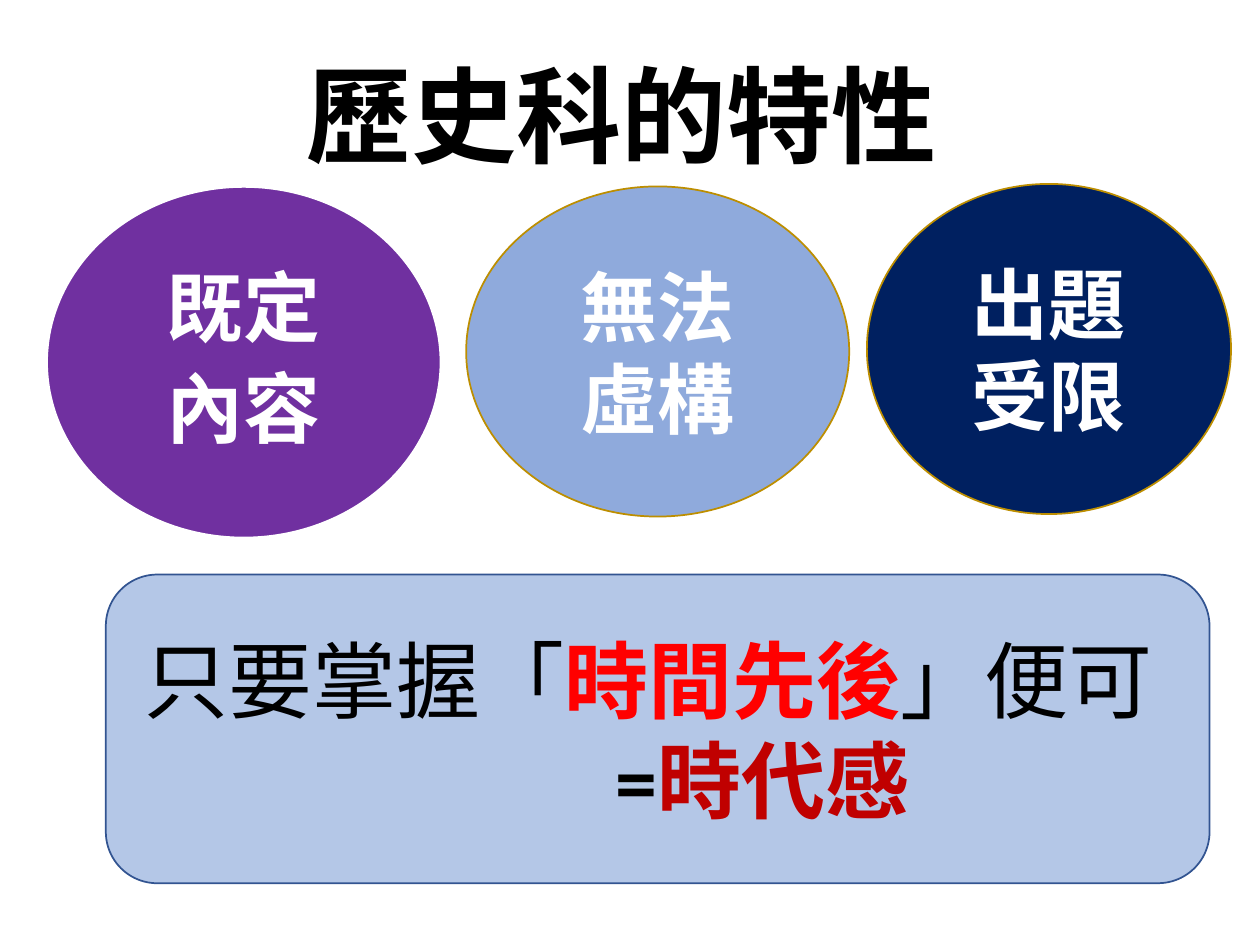
from lxml.etree import SubElement
from pptx import Presentation
from pptx.dml.color import RGBColor
from pptx.enum.shapes import MSO_SHAPE
from pptx.enum.text import MSO_ANCHOR, MSO_AUTO_SIZE, PP_ALIGN
from pptx.oxml.ns import qn
from pptx.util import Inches, Pt

COLS, ROWS = 100, 75
CJK, LATIN = "Noto Sans CJK SC", "Calibri"


def color(value):
    return RGBColor.from_string(value)


def apply(obj, values):
    for name, value in values.items():
        setattr(obj, name, value)


class Deck:
    """Holds the style and the current slide and draws its elements."""

    def __init__(self):
        self.prs = Presentation()
        apply(self.prs, {"slide_width": Inches(10), "slide_height": Inches(7.5)})
        self.s = self.prs.slides.add_slide(self.prs.slide_layouts[1])

    def box(self, x, y, w, h):
        dx, dy = self.prs.slide_width / COLS, self.prs.slide_height / ROWS
        return {"left": int(x * dx), "top": int(y * dy),
                "width": int(w * dx), "height": int(h * dy)}

    def fill_text(self, sp, lines, size, font, para):
        tf = sp.text_frame
        apply(tf, {"word_wrap": True, "auto_size": MSO_AUTO_SIZE.NONE,
                   "vertical_anchor": MSO_ANCHOR.MIDDLE})
        for i, runs in enumerate(lines):
            p = tf.add_paragraph() if i else tf.paragraphs[0]
            apply(p, para)
            for text, ink, bold in runs:
                r = p.add_run()
                r.text = text
                apply(r.font, {"size": Pt(size), "name": font, "bold": bold})
                r.font.color.rgb = color(ink)
                SubElement(r._r.get_or_add_rPr(), qn("a:ea"), typeface=CJK)
        return sp

    def paint(self, sp, fill, line, width):
        sp.fill.solid()
        sp.fill.fore_color.rgb = color(fill)
        sp.line.color.rgb = color(line)
        sp.line.width = Pt(width)

    def title(self, at, text):
        sp = self.s.shapes.title
        apply(sp, self.box(*at))
        self.fill_text(sp, [[(text, "000000", True)]], 60, CJK,
                       {"alignment": PP_ALIGN.LEFT, "line_spacing": 0.9})

    def body_oval(self, at, lines, fill, line):
        sp = self.s.placeholders[1]
        apply(sp, self.box(*at))
        geom = SubElement(sp._element.spPr, qn("a:prstGeom"), prst="ellipse")
        SubElement(geom, qn("a:avLst"))
        self.paint(sp, fill, line, 1.5)
        self.fill_text(sp, [[(t, "FFFFFF", True)] for t in lines], 44, CJK,
                       {"alignment": PP_ALIGN.CENTER, "line_spacing": 0.9,
                        "space_before": Pt(10)})
        for p in sp.text_frame.paragraphs:
            pPr = p._p.get_or_add_pPr()
            pPr.set("marL", "0")
            pPr.set("indent", "0")
            SubElement(pPr, qn("a:buNone"))

    def shape(self, kind, at, lines, size, fill, line):
        sp = self.s.shapes.add_shape(kind, *self.box(*at).values())
        sp.shadow.inherit = False
        self.paint(sp, fill, line, 1)
        return self.fill_text(sp, lines, size, LATIN, {"alignment": PP_ALIGN.CENTER})

    def oval(self, at, lines, fill):
        self.shape(MSO_SHAPE.OVAL, at, [[(t, "FFFFFF", True)] for t in lines],
                   44, fill, "BD8E00")

    def panel(self, at, lines, indent):
        sp = self.shape(MSO_SHAPE.ROUNDED_RECTANGLE, at, lines, 48, "B4C7E7", "325491")
        sp.text_frame.paragraphs[-1]._p.get_or_add_pPr().set("marL", str(Inches(indent)))


def main():
    deck = Deck()
    deck.title((23.3, 2.4, 86.2, 14.5), "歷史科的特性")
    deck.body_oval((3.7, 14.8, 31.3, 27.9), ["既定", "內容"], "7030A0", "FFFFFF")
    deck.oval((37, 14.8, 30.4, 26.2), ["無法", "虛構"], "8FAADC")
    deck.oval((68.8, 14.6, 28.9, 26.2), ["出題", "受限"], "002060")
    deck.panel((8.4, 45.6, 87.6, 24.5), [
        [("只要掌握「", "000000", False), ("時間先後", "FF0000", True),
         ("」便可 ", "000000", False)],
        [("=", "000000", True), ("時代感", "C00000", True)],
    ], 1.66)
    deck.prs.save("out.pptx")


if __name__ == "__main__":
    main()
